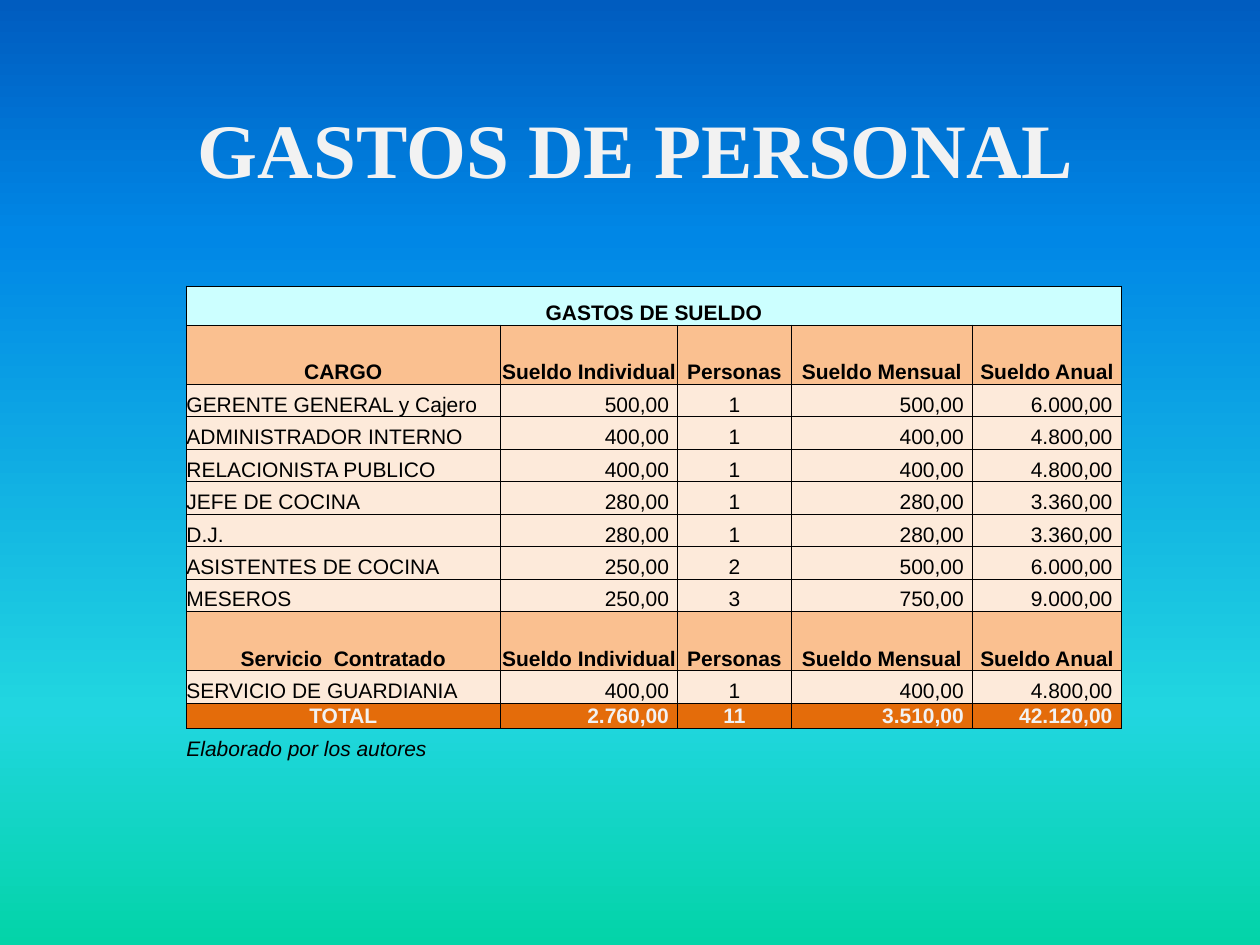
from lxml import etree
from pptx import Presentation
from pptx.dml.color import RGBColor
from pptx.enum.text import MSO_ANCHOR, PP_ALIGN
from pptx.oxml.ns import qn
from pptx.util import Inches, Pt

LEFT, MID, RIGHT = PP_ALIGN.LEFT, PP_ALIGN.CENTER, PP_ALIGN.RIGHT
BASE, CENTER = MSO_ANCHOR.BOTTOM, MSO_ANCHOR.MIDDLE

THEME = {
    "sky": [(0, "03D4A8"), (25, "21D6E0"), (75, "0087E6"), (100, "005CBF")],
    "ink": "000000", "light": "F2F2F2",
    "serif": "Times New Roman", "sans": "Arial",
    "big": 44, "small": 12, "line": 0.5,
}

TITLE = "GASTOS DE PERSONAL"
HEADS = ["Sueldo Individual", "Personas", "Sueldo Mensual", "Sueldo Anual"]
ROWS = [
    ("band", ["GASTOS DE SUELDO"]),
    ("head", ["CARGO"] + HEADS),
    ("body", ["GERENTE GENERAL y Cajero", "500,00", "1", "500,00", "6.000,00"]),
    ("body", ["ADMINISTRADOR INTERNO", "400,00", "1", "400,00", "4.800,00"]),
    ("body", ["RELACIONISTA PUBLICO", "400,00", "1", "400,00", "4.800,00"]),
    ("body", ["JEFE DE COCINA", "280,00", "1", "280,00", "3.360,00"]),
    ("body", ["D.J.", "280,00", "1", "280,00", "3.360,00"]),
    ("body", ["ASISTENTES DE COCINA", "250,00", "2", "500,00", "6.000,00"]),
    ("body", ["MESEROS", "250,00", "3", "750,00", "9.000,00"]),
    ("head", ["Servicio  Contratado"] + HEADS),
    ("body", ["SERVICIO DE GUARDIANIA", "400,00", "1", "400,00", "4.800,00"]),
    ("total", ["TOTAL", "2.760,00", "11", "3.510,00", "42.120,00"]),
    ("note", ["Elaborado por los autores"]),
]
BODY = (LEFT, RIGHT, MID, RIGHT, RIGHT)
SUM = (MID,) + BODY[1:]
# row kind: height, fill, alignment by column, text format
KINDS = {
    "band": (0.31, "CCFFFF", (MID,) * 5, {"bold": True}),
    "head": (0.47, "FAC090", (MID,) * 5, {"bold": True}),
    "body": (None, "FDEADA", BODY, {}),
    "total": (0.2, "E46C0A", SUM, {"bold": True, "color": THEME["light"]}),
    "note": (None, None, (LEFT,) * 5, {"italic": True}),
}
COLS = [2.49, 1.41, 0.9, 1.44, 1.18]
TOP, SIDE, TALL, PAD = 2.27, 1.48, 3.77, 0.07


def put(frame, text, size=THEME["small"], face=THEME["sans"],
        color=THEME["ink"], bold=False, italic=False, align=LEFT):
    par = frame.paragraphs[0]
    par.alignment = align
    if not text:
        etree.SubElement(par._p, qn("a:endParaRPr"), sz=str(size * 100))
        return
    run = par.add_run()
    run.text = text
    font = run.font
    font.size, font.name, font.bold, font.italic = Pt(size), face, bold, italic
    font.color.rgb = RGBColor.from_string(color)


def paint_sky(slide):
    fill = slide.background.fill
    fill.gradient()
    fill.gradient_angle = 90
    stops = next(slide.element.iter(qn("a:gsLst")))
    for old in list(stops):
        stops.remove(old)
    for share, color in THEME["sky"]:
        stop = etree.SubElement(stops, qn("a:gs"), pos=str(share * 1000))
        etree.SubElement(stop, qn("a:srgbClr"), val=color)


def rule(cell, sides):
    """Draw the named borders of a cell and clear the others."""
    props = cell._tc.get_or_add_tcPr()
    for side in "LRTB":
        line = etree.SubElement(props, qn(f"a:ln{side}"),
                                w=str(Pt(THEME["line"])))
        if side in sides:
            solid = etree.SubElement(line, qn("a:solidFill"))
            etree.SubElement(solid, qn("a:srgbClr"), val=THEME["ink"])
        else:
            etree.SubElement(line, qn("a:noFill"))


def add_costs(slide):
    table = slide.shapes.add_table(
        len(ROWS), len(COLS), Inches(SIDE), Inches(TOP),
        Inches(sum(COLS)), Inches(TALL)).table
    table.first_row = table.horz_banding = False
    for col, width in zip(table.columns, COLS):
        col.width = Inches(width)
    fixed = [KINDS[kind][0] for kind, _ in ROWS]
    rest = (TALL - sum(h for h in fixed if h)) / fixed.count(None)
    for r, (kind, texts) in enumerate(ROWS):
        high, color, aligns, form = KINDS[kind]
        table.rows[r].height = Inches(high or rest)
        for c, align in enumerate(aligns):
            cell = table.cell(r, c)
            cell.margin_left = cell.margin_top = cell.margin_bottom = 0
            cell.margin_right = Inches(PAD if align == RIGHT else 0)
            cell.vertical_anchor = BASE
            rule(cell, "T" if kind == "note" else "LRTB")
            if color:
                cell.fill.solid()
                cell.fill.fore_color.rgb = RGBColor.from_string(color)
            else:
                cell.fill.background()
            text = texts[c] if c < len(texts) else ""
            put(cell.text_frame, text, align=align, **form)
    table.cell(0, 0).merge(table.cell(0, len(COLS) - 1))


def main():
    deck = Presentation()
    deck.slide_width, deck.slide_height = Inches(10), Inches(7.5)
    slide = deck.slides.add_slide(deck.slide_layouts[6])
    paint_sky(slide)
    frame = slide.shapes.add_textbox(
        Inches(0.55), Inches(0.55), Inches(9), Inches(1.25)).text_frame
    frame.word_wrap = True
    frame.vertical_anchor = CENTER
    put(frame, TITLE, size=THEME["big"], face=THEME["serif"],
        color=THEME["light"], bold=True, align=MID)
    add_costs(slide)
    deck.save("out.pptx")


if __name__ == "__main__":
    main()
